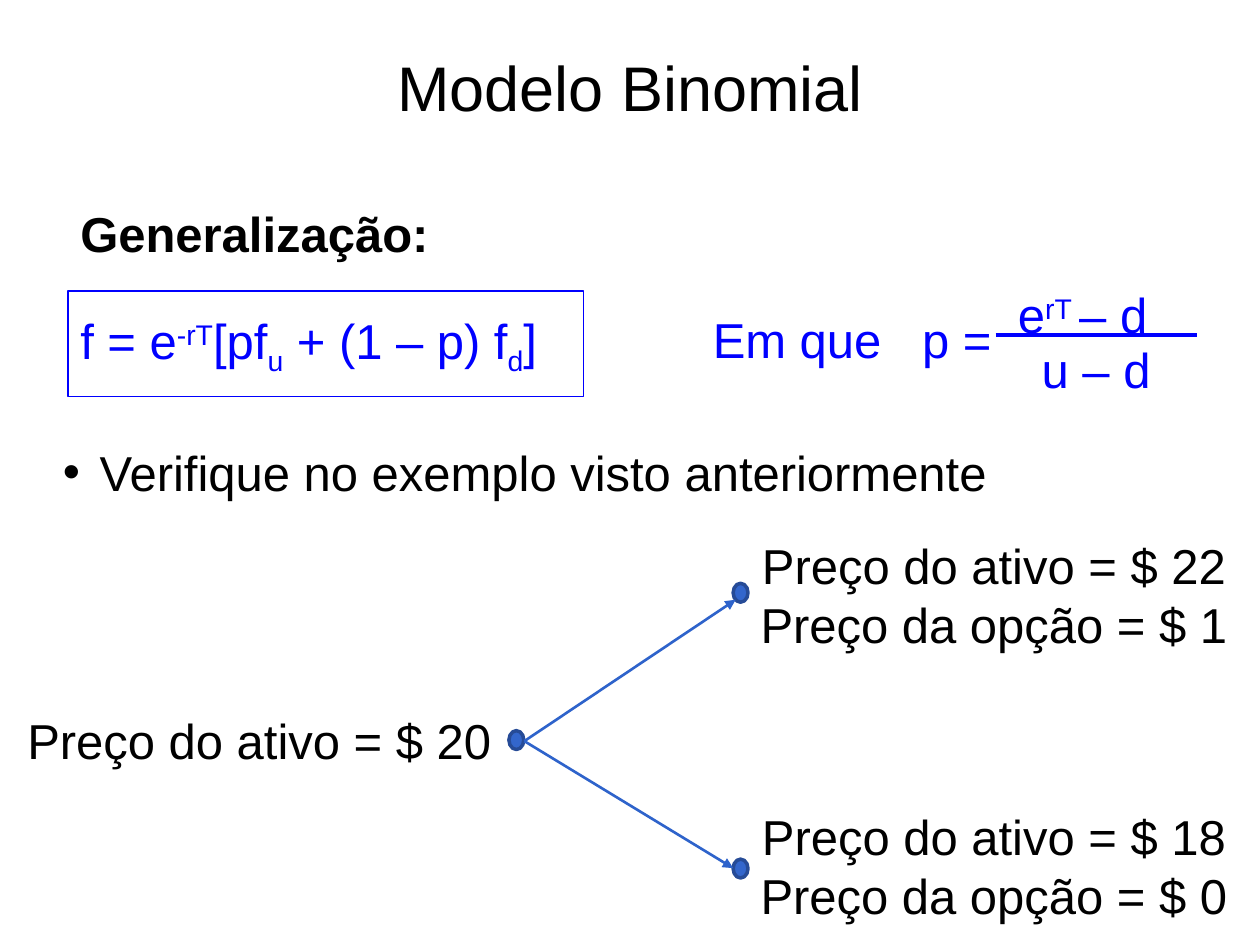
from lxml import etree
from pptx import Presentation
from pptx.dml.color import RGBColor
from pptx.enum.shapes import MSO_CONNECTOR, MSO_SHAPE
from pptx.enum.text import MSO_ANCHOR, PP_ALIGN
from pptx.oxml.ns import qn
from pptx.util import Cm, Pt

STRAIGHT = MSO_CONNECTOR.STRAIGHT
OVAL, RECTANGLE = MSO_SHAPE.OVAL, MSO_SHAPE.RECTANGLE
TOP, MIDDLE = MSO_ANCHOR.TOP, MSO_ANCHOR.MIDDLE
LEFT, CENTER = PP_ALIGN.LEFT, PP_ALIGN.CENTER

BLACK, BLUE = "000000", "0000FF"
NODE_FILL, NODE_EDGE, BRANCH = "3366CC", "264B97", "2E63CB"
SUPER, SUB = 30000, -25000

TITLE = "Modelo Binomial"
HEADING = "Generalização:"
TASK = "Verifique no exemplo visto anteriormente"
FORMULA = [("f = e", 0), ("-rT", SUPER), ("[pf", 0), ("u", SUB),
           (" + (1 – p) f", 0), ("d", SUB), ("]", 0)]
WHERE = "Em que\tp ="
NUMERATOR = [("e", 0), ("rT ", SUPER), ("– d", 0)]
DENOMINATOR = "u – d"
PRICES = [
    (0.13, 14.2, 1.45, ["Preço do ativo = $ 20"]),
    (14.94, 10.67, 2.64, ["Preço do ativo = $ 22", "Preço da opção = $ 1"]),
    (14.94, 16.13, 2.64, ["Preço do ativo = $ 18", "Preço da opção = $ 0"]),
]
NODES = [(14.78, 11.76), (14.78, 17.32), (10.26, 14.73)]
ROOT = (10.57, 14.94)
BRANCH_ENDS = [(14.83, 12.09), (14.78, 17.5)]


def color(value):
    return RGBColor.from_string(value)


def box(area):
    return slide.shapes.add_textbox(*map(Cm, area))


def write(shape, lines, ink=BLACK, size=28, bold=False, align=LEFT,
          anchor=TOP, spacing=1.2, wrap=True):
    frame = shape.text_frame
    frame.word_wrap = wrap
    frame.vertical_anchor = anchor
    for index, line in enumerate(lines):
        paragraph = frame.add_paragraph() if index else frame.paragraphs[0]
        paragraph.alignment = align
        paragraph.line_spacing = spacing
        for text, baseline in [(line, 0)] if isinstance(line, str) else line:
            run = paragraph.add_run()
            run.text = text
            run.font.name = "Arial"
            run.font.size = Pt(size)
            run.font.bold = bold
            run.font.color.rgb = color(ink)
            if baseline:
                run.font._element.set("baseline", str(baseline))
    return frame.paragraphs[0]._p.get_or_add_pPr()


def connect(start, end, ink, width, arrow=False):
    line = slide.shapes.add_connector(STRAIGHT, *map(Cm, start + end))
    line.line.color.rgb = color(ink)
    line.line.width = Pt(width)
    if arrow:
        etree.SubElement(line.line._get_or_add_ln(), qn("a:tailEnd"), type="triangle")
    etree.SubElement(line._element.spPr, qn("a:effectLst"))


def outlined(kind, area, ink, width):
    shape = slide.shapes.add_shape(kind, *map(Cm, area))
    shape.shadow.inherit = False
    shape.fill.background()
    shape.line.color.rgb = color(ink)
    shape.line.width = Pt(width)
    return shape


deck = Presentation()
deck.slide_width, deck.slide_height = Cm(25.4), Cm(19.05)
slide = deck.slides.add_slide(deck.slide_layouts[6])

write(box((1.27, 0.76, 22.86, 1.96)), [TITLE], size=36, align=CENTER,
      anchor=MIDDLE, spacing=1.0)
write(box((1.37, 3.51, 18.31, 2.11)), [HEADING], bold=True, spacing=1.4)

task = write(box((1.02, 8.56, 23.37, 8.2)), [TASK])
task.set("marL", str(Cm(0.74)))
task.set("indent", str(-Cm(0.74)))
etree.SubElement(task, qn("a:buFont"), typeface="Arial")
etree.SubElement(task, qn("a:buChar"), char="•")

write(outlined(RECTANGLE, (1.37, 5.87, 10.39, 2.13), BLUE, 0.75), [FORMULA], BLUE)

where = write(box((14.12, 5.87, 10.59, 1.55)), [WHERE], BLUE)
stops = etree.SubElement(where, qn("a:tabLst"))
etree.SubElement(stops, qn("a:tab"), pos=str(Cm(4.22)), algn="l")

write(box((20.27, 5.38, 3.35, 1.7)), [NUMERATOR], BLUE, wrap=False)
write(box((20.75, 6.48, 2.74, 1.7)), [DENOMINATOR], BLUE, wrap=False)
connect((20.07, 6.76), (24.13, 6.76), BLUE, 2.25)

for left, top, height, lines in PRICES:
    write(box((left, top, 10.19, height)), lines, align=CENTER, spacing=1.0)

for left, top in NODES:
    node = outlined(OVAL, (left, top, 0.3, 0.38), NODE_EDGE, 2)
    node.fill.solid()
    node.fill.fore_color.rgb = color(NODE_FILL)

for end in BRANCH_ENDS:
    connect(ROOT, end, BRANCH, 1.5, arrow=True)

deck.save("out.pptx")
